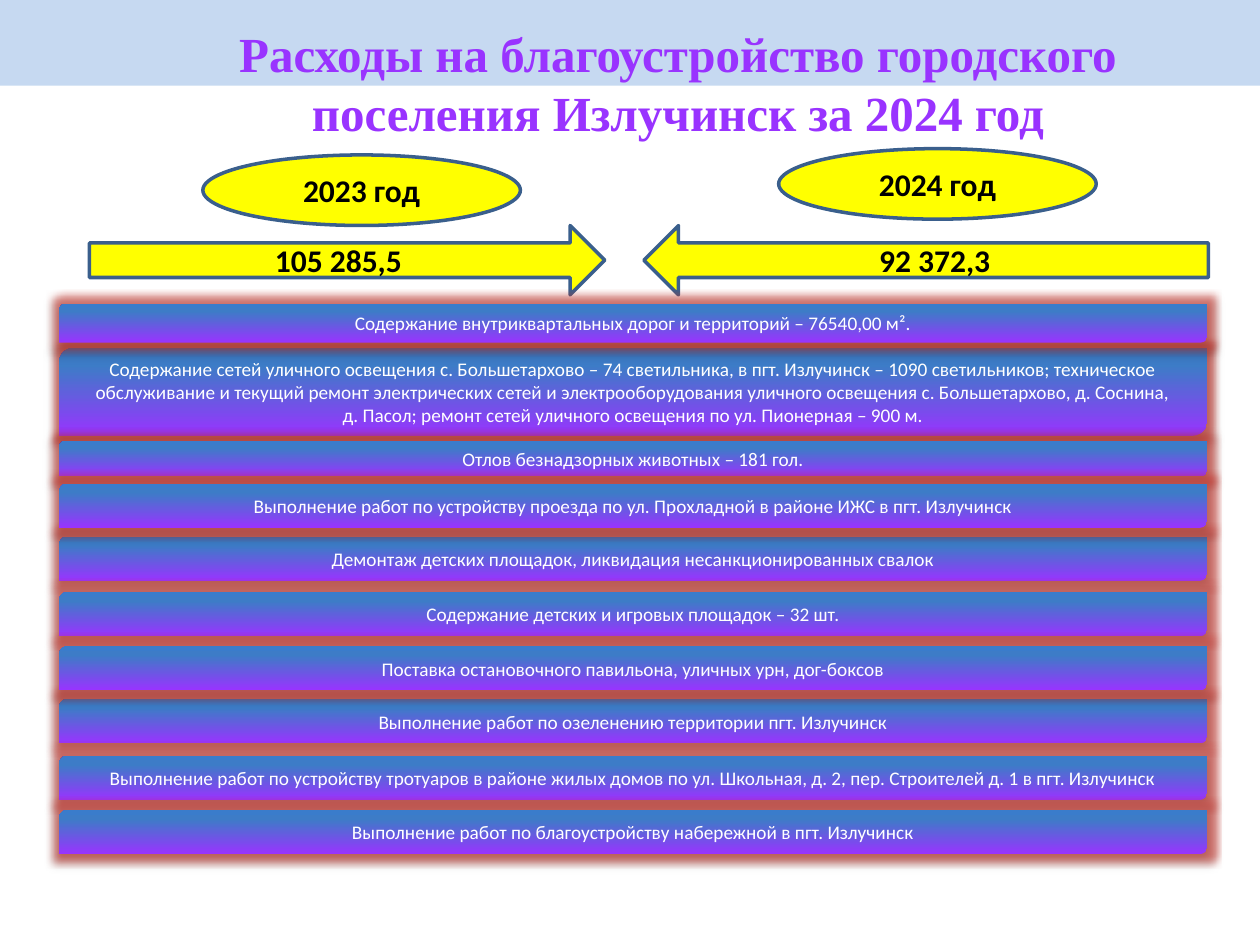
from dataclasses import dataclass

from lxml import etree
from pptx import Presentation
from pptx.dml.color import RGBColor
from pptx.enum import shapes, text
from pptx.oxml import ns
from pptx.util import Inches, Pt


@dataclass(frozen=True)
class Theme:
    banner: str = "C6D9F1"
    title: str = "9933FF"
    year_fill: str = "FFFF00"
    year_line: str = "3A5F8C"
    year_text: str = "000000"
    work_text: str = "FFFFFF"
    work_stops: tuple = ((0, "9933FF"), (80, "3D7CC7"), (100, "3A7CCB"))
    glow: str = "C8352C"
    title_font: str = "Times New Roman"
    body_font: str = "Calibri"
    title_size: int = 28
    year_size: int = 18
    work_size: int = 11


@dataclass(frozen=True)
class YearMark:
    kind: shapes.MSO_SHAPE
    label: str
    left: float
    top: float
    width: float
    height: float


@dataclass(frozen=True)
class Work:
    label: str
    top: float
    height: float = 0.35


THEME = Theme()
WORK_LEFT, WORK_WIDTH = 0.47, 9.11

YEAR_MARKS = (
    YearMark(shapes.MSO_SHAPE.RIGHT_ARROW, "105 285,5", 0.71, 1.79, 4.09, 0.55),
    YearMark(shapes.MSO_SHAPE.LEFT_ARROW, "92 372,3", 5.11, 1.79, 4.48, 0.55),
    YearMark(shapes.MSO_SHAPE.OVAL, "2023 год", 1.61, 1.23, 2.52, 0.56),
    YearMark(shapes.MSO_SHAPE.OVAL, "2024 год", 6.18, 1.18, 2.52, 0.56),
)

# Stacking order matters: each bar's glow falls on the bars before it.
WORKS = (
    Work("Содержание сетей уличного освещения с. Большетархово – 74 светильника, "
         "в пгт. Излучинск – 1090 светильников; техническое обслуживание и текущий "
         "ремонт электрических сетей и электрооборудования уличного освещения "
         "с. Большетархово, д. Соснина,\vд. Пасол; ремонт сетей уличного освещения "
         "по ул. Пионерная – 900 м.", 2.76, 0.7),
    Work("Содержание внутриквартальных дорог и территорий – 76540,00 м².", 2.41, 0.31),
    Work("Демонтаж детских площадок, ликвидация несанкционированных свалок", 4.26),
    Work("Отлов безнадзорных животных – 181 гол.", 3.5, 0.28),
    Work("Содержание детских и игровых площадок – 32 шт.", 4.7),
    Work("Выполнение работ по озеленению территории пгт. Излучинск", 5.55),
    Work("Выполнение работ по устройству тротуаров в районе жилых домов по "
         "ул. Школьная, д. 2, пер. Строителей д. 1 в пгт. Излучинск", 6),
    Work("Выполнение работ по устройству проезда по ул. Прохладной в районе ИЖС "
         "в пгт. Излучинск", 3.84),
    Work("Поставка остановочного павильона, уличных урн, дог-боксов", 5.13),
    Work("Выполнение работ по благоустройству набережной в пгт. Излучинск", 6.43),
)


def write(shape, label: str, font: str, size: int, color: str, bold: bool,
          anchor=text.MSO_ANCHOR.MIDDLE) -> None:
    frame = shape.text_frame
    frame.text = label
    frame.word_wrap = True
    frame.vertical_anchor = anchor
    paragraph = frame.paragraphs[0]
    paragraph.alignment = text.PP_ALIGN.CENTER
    for run in paragraph.runs:
        run.font.name = font
        run.font.size = Pt(size)
        run.font.bold = bold
        run.font.color.rgb = RGBColor.from_string(color)


def add_solid(slide, kind, left: float, top: float, width: float, height: float,
              color: str):
    shape = slide.shapes.add_shape(
        kind, Inches(left), Inches(top), Inches(width), Inches(height))
    shape.shadow.inherit = False
    shape.fill.solid()
    shape.fill.fore_color.rgb = RGBColor.from_string(color)
    shape.line.fill.background()
    return shape


def add_title(slide, label: str) -> None:
    title = slide.shapes.title
    title.left, title.top = Inches(0.88), Inches(0.14)
    title.width, title.height = Inches(9), Inches(1.25)
    write(title, label, THEME.title_font, THEME.title_size, THEME.title, True,
          text.MSO_ANCHOR.TOP)


def add_banner(slide) -> None:
    """Draw the top band and send it behind the title."""
    banner = add_solid(slide, shapes.MSO_SHAPE.RECTANGLE, 0, 0, 10, 0.68, THEME.banner)
    slide.shapes.title.element.addprevious(banner.element)


def add_year_mark(slide, mark: YearMark) -> None:
    shape = add_solid(slide, mark.kind, mark.left, mark.top, mark.width, mark.height,
                      THEME.year_fill)
    shape.line.color.rgb = RGBColor.from_string(THEME.year_line)
    shape.line.width = Pt(2)
    write(shape, mark.label, THEME.body_font, THEME.year_size, THEME.year_text, True)


def style_work(shape) -> None:
    """Give a bar its three-stop gradient, red glow and soft shadow."""
    properties = shape.element.spPr
    stops = "".join(f'<a:gs pos="{position * 1000}"><a:srgbClr val="{color}"/></a:gs>'
                    for position, color in THEME.work_stops)
    gradient = (f'<a:gradFill {ns.nsdecls("a")} rotWithShape="1"><a:gsLst>{stops}</a:gsLst>'
                '<a:lin ang="16200000" scaled="0"/></a:gradFill>')
    effects = (f'<a:effectLst {ns.nsdecls("a")}><a:glow rad="{Pt(8)}">'
               f'<a:srgbClr val="{THEME.glow}"><a:alpha val="60000"/></a:srgbClr></a:glow>'
               f'<a:outerShdw blurRad="{Pt(3.1)}" dist="{Pt(1.8)}" dir="5400000" '
               'rotWithShape="0"><a:srgbClr val="000000"><a:alpha val="35000"/></a:srgbClr>'
               '</a:outerShdw></a:effectLst>')
    for tag, replacement in (("a:solidFill", gradient), ("a:effectLst", effects)):
        properties.replace(properties.find(ns.qn(tag)), etree.fromstring(replacement))


def add_work(slide, work: Work) -> None:
    shape = add_solid(slide, shapes.MSO_SHAPE.ROUND_2_DIAG_RECTANGLE, WORK_LEFT,
                      work.top, WORK_WIDTH, work.height, THEME.title)
    style_work(shape)
    write(shape, work.label, THEME.body_font, THEME.work_size, THEME.work_text, False)


def main() -> None:
    deck = Presentation()
    deck.slide_width, deck.slide_height = Inches(10), Inches(7.5)
    slide = deck.slides.add_slide(deck.slide_layouts[5])
    add_title(slide, "Расходы на благоустройство городского поселения Излучинск за 2024 год")
    add_banner(slide)
    for mark in YEAR_MARKS:
        add_year_mark(slide, mark)
    for work in WORKS:
        add_work(slide, work)
    deck.save("out.pptx")


if __name__ == "__main__":
    main()
